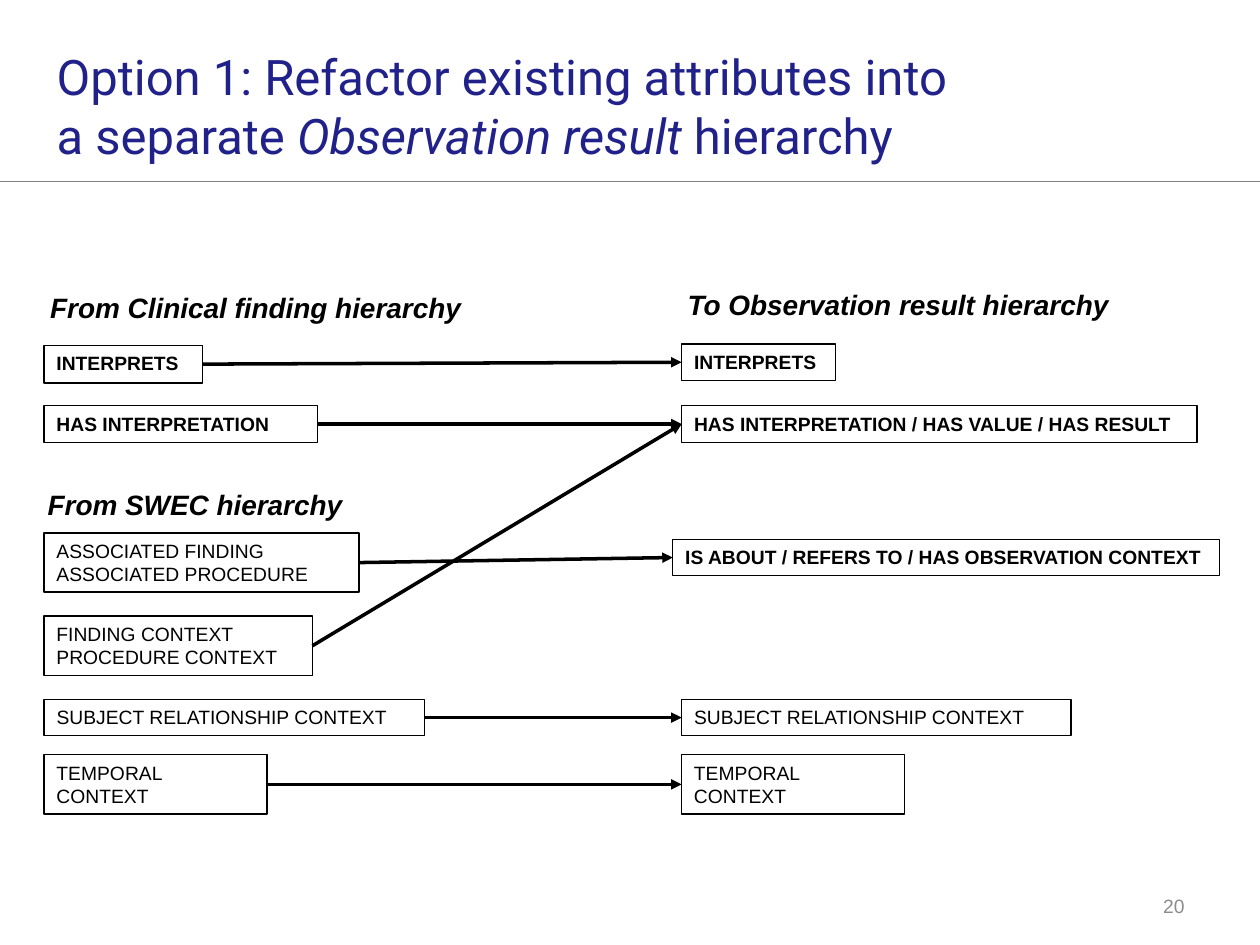
from dataclasses import dataclass

from lxml.etree import SubElement
from pptx import Presentation
from pptx.dml.color import RGBColor
from pptx.enum.shapes import MSO_CONNECTOR, MSO_SHAPE
from pptx.enum.text import MSO_ANCHOR, MSO_AUTO_SIZE, PP_ALIGN
from pptx.oxml.ns import qn
from pptx.util import Inches, Pt


@dataclass(frozen=True)
class Theme:
    """Colours, fonts and type sizes of the slide."""

    title_font: str = "Roboto"
    body_font: str = "Arial"
    title_color: RGBColor = RGBColor(0x21, 0x21, 0x8A)
    ink: RGBColor = RGBColor(0, 0, 0)
    rule: RGBColor = RGBColor(0x80, 0x80, 0x80)
    muted: RGBColor = RGBColor(0x8C, 0x8C, 0x8C)
    title_size: float = 28
    heading_size: float = 16
    label_size: float = 11
    thin: float = 0.75
    thick: float = 2


class MappingSlide:
    """Draws the elements of an attribute mapping on one slide."""

    LEFT_SITE, RIGHT_SITE = 1, 3

    def __init__(self, deck, theme):
        self.theme = theme
        self.slide = deck.slides.add_slide(deck.slide_layouts[5])

    def style(self, span, size, color, font=None, bold=False, italic=False):
        """Format one run."""
        span.font.name = font or self.theme.body_font
        span.font.size = Pt(size)
        span.font.color.rgb = color
        span.font.bold = bold
        span.font.italic = italic

    def fill_text(self, box, text, size, color, align=PP_ALIGN.LEFT, **look):
        """Fill a box with text in one style."""
        box.text_frame.text = text
        for para in box.text_frame.paragraphs:
            para.alignment = align
            for span in para.runs:
                self.style(span, size, color, **look)

    def title(self, parts, left, top, width, height):
        """Place the title and format its parts, given as text and italic flag."""
        box = self.slide.shapes.title
        box.left, box.top = Inches(left), Inches(top)
        box.width, box.height = Inches(width), Inches(height)
        frame = box.text_frame
        frame.auto_size = MSO_AUTO_SIZE.NONE
        frame.word_wrap = True
        frame.vertical_anchor = MSO_ANCHOR.MIDDLE
        frame.margin_left = frame.margin_right = Inches(0.1)
        frame.margin_top = frame.margin_bottom = Inches(0.1)
        para = frame.paragraphs[0]
        para.alignment = PP_ALIGN.LEFT
        for text, italic in parts:
            span = para.add_run()
            span.text = text
            self.style(span, self.theme.title_size, self.theme.title_color,
                       font=self.theme.title_font, italic=italic)

    def heading(self, text, left, top, width):
        """Add an unwrapped bold italic heading."""
        box = self.slide.shapes.add_textbox(
            Inches(left), Inches(top), Inches(width), Inches(0.37))
        box.text_frame.word_wrap = False
        box.text_frame.auto_size = MSO_AUTO_SIZE.SHAPE_TO_FIT_TEXT
        self.fill_text(box, text, self.theme.heading_size, self.theme.ink,
                       bold=True, italic=True)

    def attribute(self, text, left, top, width, height, bold):
        """Add an outlined attribute box."""
        box = self.slide.shapes.add_shape(
            MSO_SHAPE.RECTANGLE, Inches(left), Inches(top), Inches(width), Inches(height))
        box.shadow.inherit = False
        box.fill.background()
        box.line.color.rgb = self.theme.ink
        box.line.width = Pt(self.theme.thin)
        box.text_frame.word_wrap = True
        box.text_frame.auto_size = MSO_AUTO_SIZE.SHAPE_TO_FIT_TEXT
        box.text_frame.vertical_anchor = MSO_ANCHOR.TOP
        self.fill_text(box, text, self.theme.label_size, self.theme.ink, bold=bold)
        return box

    def line(self, start, end, color, width):
        """Add a straight line without shadow."""
        line = self.slide.shapes.add_connector(
            MSO_CONNECTOR.STRAIGHT, *map(Inches, start), *map(Inches, end))
        line.line.color.rgb = color
        line.line.width = Pt(width)
        SubElement(line._element.spPr, qn("a:effectLst"))
        return line

    def arrow(self, source, target):
        """Join the right side of one box to the left side of another."""
        arrow = self.line((0, 0), (1, 1), self.theme.ink, self.theme.thick)
        arrow.begin_connect(source, self.RIGHT_SITE)
        arrow.end_connect(target, self.LEFT_SITE)
        outline = arrow._element.spPr.find(qn("a:ln"))
        SubElement(outline, qn("a:tailEnd"), type="triangle")

    def page_number(self, text, left, top, width, height):
        """Add the right-aligned page number."""
        box = self.slide.shapes.add_textbox(
            Inches(left), Inches(top), Inches(width), Inches(height))
        box.text_frame.word_wrap = True
        box.text_frame.vertical_anchor = MSO_ANCHOR.MIDDLE
        self.fill_text(box, text, self.theme.label_size, self.theme.muted, PP_ALIGN.RIGHT)


SOURCE_LEFT, TARGET_LEFT = 0.35, 5.41
ONE_LINE, TWO_LINES = 0.29, 0.47

HEADINGS = [
    ("From Clinical finding hierarchy", 0.3, 2.26, 3.51),
    ("To Observation result hierarchy", 5.36, 2.23, 3.6),
    ("From SWEC hierarchy", 0.28, 3.82, 2.57),
]

SOURCES = {
    "interprets": ("INTERPRETS", SOURCE_LEFT, 2.74, 1.26, 0.3, True),
    "interpretation": ("HAS INTERPRETATION", SOURCE_LEFT, 3.22, 2.17, ONE_LINE, True),
    "associated": ("ASSOCIATED FINDING\nASSOCIATED PROCEDURE",
                   SOURCE_LEFT, 4.23, 2.5, TWO_LINES, False),
    "context": ("FINDING CONTEXT\nPROCEDURE CONTEXT",
                SOURCE_LEFT, 4.89, 2.13, TWO_LINES, False),
    "subject": ("SUBJECT RELATIONSHIP CONTEXT", SOURCE_LEFT, 5.55, 3.02, ONE_LINE, False),
    "temporal": ("TEMPORAL CONTEXT", SOURCE_LEFT, 5.99, 1.77, TWO_LINES, False),
}

TARGETS = {
    "interprets": ("INTERPRETS", TARGET_LEFT, 2.73, 1.22, ONE_LINE, True),
    "result": ("HAS INTERPRETATION / HAS VALUE / HAS RESULT",
               TARGET_LEFT, 3.22, 4.09, ONE_LINE, True),
    "about": ("IS ABOUT / REFERS TO / HAS OBSERVATION CONTEXT",
              5.34, 4.28, 4.34, ONE_LINE, True),
    "subject": ("SUBJECT RELATIONSHIP CONTEXT", TARGET_LEFT, 5.55, 3.09, ONE_LINE, False),
    "temporal": ("TEMPORAL CONTEXT", TARGET_LEFT, 5.99, 1.77, TWO_LINES, False),
}

MAPPINGS = [
    ("interprets", "interprets"),
    ("interpretation", "result"),
    ("associated", "about"),
    ("context", "result"),
    ("subject", "subject"),
    ("temporal", "temporal"),
]


def main():
    """Build and save the deck."""
    deck = Presentation()
    deck.slide_width, deck.slide_height = Inches(10), Inches(7.5)
    theme = Theme()
    page = MappingSlide(deck, theme)
    page.line((0, 1.44), (10, 1.44), theme.rule, theme.thin)
    page.title([("Option 1: Refactor existing attributes into a separate ", False),
                ("Observation result ", True), ("hierarchy", False)],
               0.35, 0.18, 7.52, 1.32)
    for heading in HEADINGS:
        page.heading(*heading)
    sources = {key: page.attribute(*item) for key, item in SOURCES.items()}
    targets = {key: page.attribute(*item) for key, item in TARGETS.items()}
    for source, target in MAPPINGS:
        page.arrow(sources[source], targets[target])
    page.page_number("20", 7.17, 7.03, 2.33, 0.32)
    deck.save("out.pptx")


if __name__ == "__main__":
    main()
